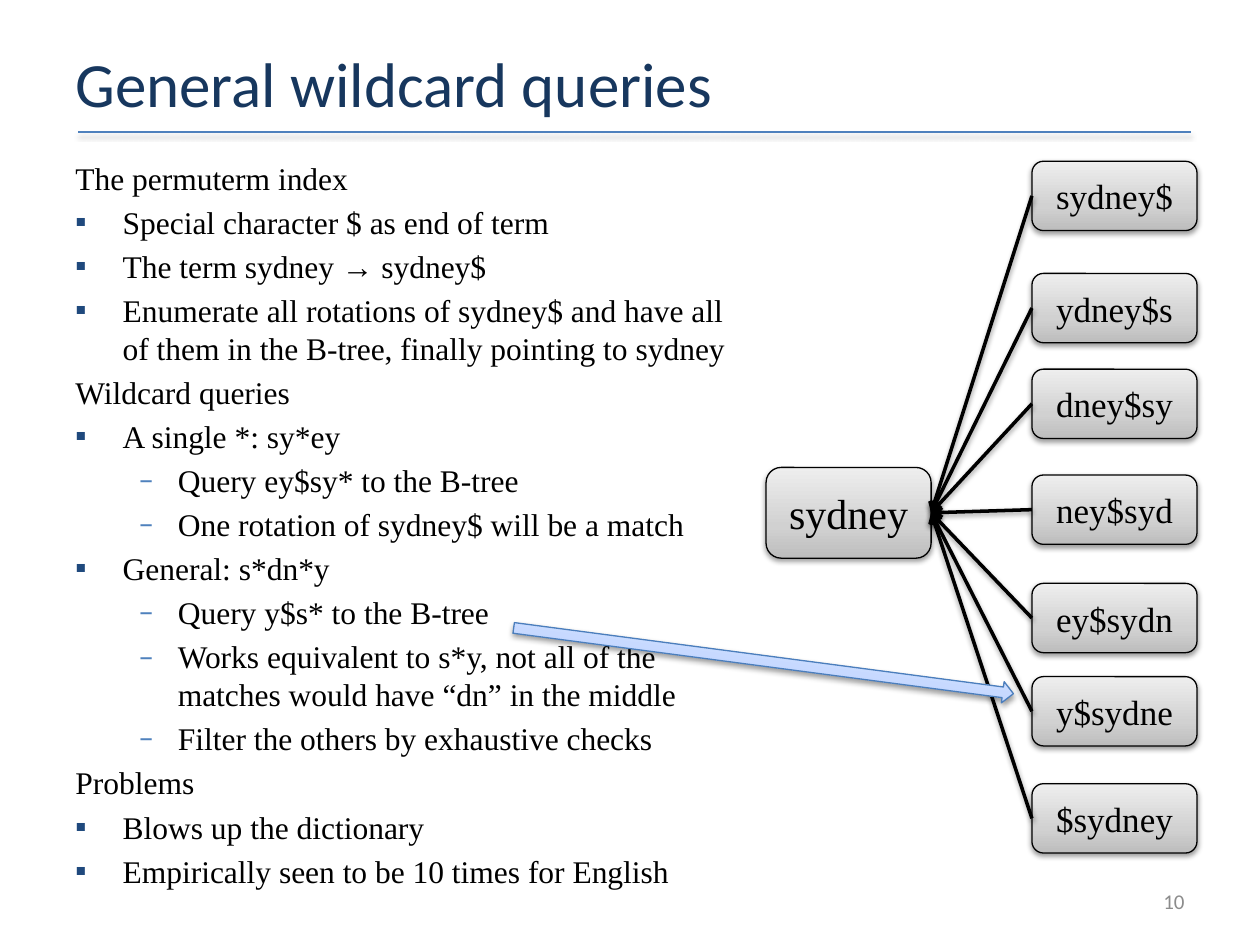
from pptx import Presentation
from pptx.dml.color import RGBColor
from pptx.enum.shapes import MSO_CONNECTOR, MSO_SHAPE
from pptx.enum.text import MSO_ANCHOR, PP_ALIGN
from pptx.oxml import parse_xml
from pptx.oxml.ns import nsdecls
from pptx.util import Inches, Pt

COLUMNS = 100
SERIF, SANS = "Times New Roman", "Calibri"
GREY = [(0, "BDBDBD"), (35, "D1D1D1"), (100, "EEEEEE")]
BLUE = [(0, "A4C4FF"), (35, "BFD4FF"), (100, "E6EEFF")]
LEVELS = {1: (3.75, 3.75, "▪", "1F497D"), 2: (8.13, 3.13, "–", "4F81BD")}
ROTATION_ROWS = [12.8, 21.7, 29.3, 37.7, 46.3, 53.7, 62.2]
OUTLINE = [
    (0, "The permuterm index"),
    (1, "Special character $ as end of term"),
    (1, "The term sydney → sydney$"),
    (1, "Enumerate all rotations of sydney$ and have all of them in the B-tree, "
        "finally pointing to sydney"),
    (0, "Wildcard queries"),
    (1, "A single *: sy*ey"),
    (2, "Query ey$sy* to the B-tree"),
    (2, "One rotation of sydney$ will be a match"),
    (1, "General: s*dn*y"),
    (2, "Query y$s* to the B-tree"),
    (2, "Works equivalent to s*y, not all of the matches would have “dn” in the middle"),
    (2, "Filter the others by exhaustive checks"),
    (0, "Problems"),
    (1, "Blows up the dictionary"),
    (1, "Empirically seen to be 10 times for English"),
]

deck = Presentation()
deck.slide_width, deck.slide_height = Inches(10), Inches(7.5)
slide = deck.slides.add_slide(deck.slide_layouts[6])


def grid(*cells):
    return [round(cell * deck.slide_width / COLUMNS) for cell in cells]


def rgb(code):
    return RGBColor.from_string(code)


def xml(tag, attributes="", inner=""):
    return parse_xml(f"<a:{tag} {nsdecls('a')} {attributes}>{inner}</a:{tag}>")


def cast_shadow(item):
    item._element.spPr.append(xml("effectLst", inner=(
        '<a:outerShdw blurRad="39370" dist="20320" dir="5400000" rotWithShape="0">'
        '<a:srgbClr val="000000"><a:alpha val="38000"/></a:srgbClr></a:outerShdw>')))


def write(paragraph, text, size=18, font=SERIF, color="000000", align=PP_ALIGN.LEFT):
    run = paragraph.add_run()
    run.text = text
    run.font.size, run.font.name = Pt(size), font
    run.font.color.rgb = rgb(color)
    paragraph.alignment = align


def text_frame(box, anchor=MSO_ANCHOR.MIDDLE):
    frame = slide.shapes.add_textbox(*grid(*box)).text_frame
    frame.word_wrap = True
    frame.vertical_anchor = anchor
    return frame


def gradient_shape(preset, box, stops, border):
    shape = slide.shapes.add_shape(preset, *grid(*box))
    shape.line.color.rgb = rgb(border)
    shape.line.width = Pt(0.75)
    marks = "".join(f'<a:gs pos="{pos * 1000}"><a:srgbClr val="{code}"/></a:gs>'
                    for pos, code in stops)
    shape._element.spPr.get_or_add_ln().addprevious(xml(
        "gradFill", 'rotWithShape="1"',
        f'<a:gsLst>{marks}</a:gsLst><a:lin ang="16200000" scaled="0"/>'))
    cast_shadow(shape)
    return shape


def connector(color, width, ends=(0, 0, 0, 0)):
    line = slide.shapes.add_connector(MSO_CONNECTOR.STRAIGHT, *grid(*ends))
    line.line.color.rgb = rgb(color)
    line.line.width = Pt(width)
    cast_shadow(line)
    return line


def heading(left, top, width, height):
    rule = top + height + 0.4
    connector("4F81BD", 1, (left + 1.2, rule, left + width - 0.5, rule))
    write(text_frame((left, top, width, height)).paragraphs[0],
          "General wildcard queries", size=36, font=SANS, color="17375E")


def add_bullet(paragraph, margin, hanging, mark, color):
    properties = paragraph._p.get_or_add_pPr()
    margin, hanging = grid(margin, hanging)
    properties.set("marL", str(margin))
    properties.set("indent", str(-hanging))
    properties.append(xml("buClr", inner=f'<a:srgbClr val="{color}"/>'))
    properties.append(xml("buFont", f'typeface="{SANS}"'))
    properties.append(xml("buChar", f'char="{mark}"'))


def outline(box):
    frame = text_frame(box, MSO_ANCHOR.TOP)
    for index, (level, text) in enumerate(OUTLINE):
        paragraph = frame.add_paragraph() if index else frame.paragraphs[0]
        paragraph.level = max(level - 1, 0)
        paragraph.space_before = Pt(3.6)
        paragraph.line_spacing = Pt(21.6)
        write(paragraph, text)
        if level:
            add_bullet(paragraph, *LEVELS[level])


def term_node(text, size, box):
    node = gradient_shape(MSO_SHAPE.ROUNDED_RECTANGLE, box, GREY, "000000")
    frame = node.text_frame
    frame.word_wrap = False
    frame.vertical_anchor = MSO_ANCHOR.MIDDLE
    write(frame.paragraphs[0], text, size=size, align=PP_ALIGN.CENTER)
    return node


def permuterm_diagram(left, width, node_width, term):
    hub = term_node(term, 24, (left, 37.1, node_width, 7.2))
    marked = term + "$"
    rotations = [
        term_node(marked[shift:] + marked[:shift], 20,
                  (left + width - node_width, row, node_width, 5.5))
        for shift, row in enumerate(ROTATION_ROWS)]
    for rotation in rotations:
        pointer = connector("000000", 2)
        pointer.begin_connect(rotation, 1)
        pointer.end_connect(hub, 3)
        pointer.line._get_or_add_ln().append(xml("tailEnd", 'type="arrow"'))


def query_arrow(box):
    arrow = gradient_shape(MSO_SHAPE.RIGHT_ARROW, box, BLUE, "4B7EBC")
    arrow.rotation = 7.5


def page_number(box):
    write(text_frame(box).paragraphs[0], "10", size=12, font=SANS,
          color="8C8C8C", align=PP_ALIGN.RIGHT)


heading(5, 3, 90, 7.1)
outline((5, 12.1, 55.8, 60.2))
page_number((71.7, 69.5, 23.3, 4))
permuterm_diagram(60.8, 34.2, 13.1, "sydney")
query_arrow((40.6, 51.6, 40, 1.7))
deck.save("out.pptx")
